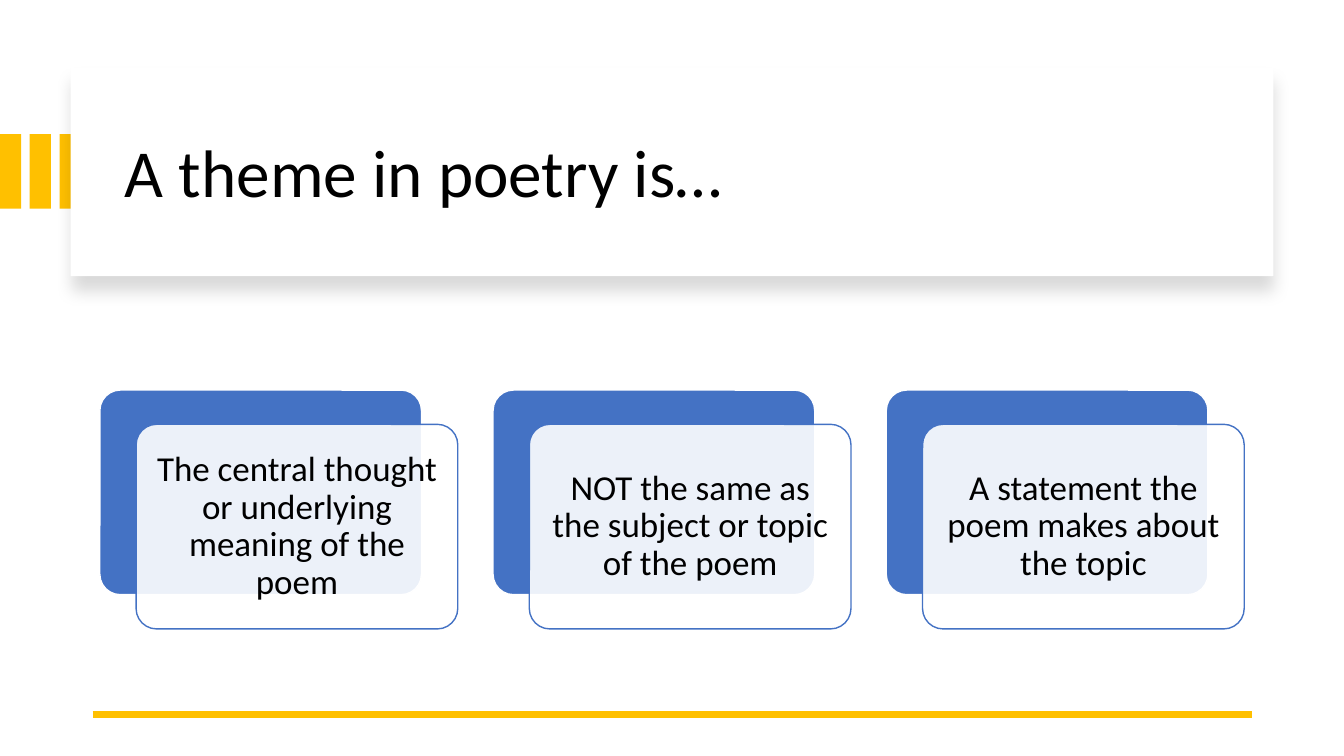
from lxml import etree
from pptx import Presentation
from pptx.dml.color import RGBColor
from pptx.enum.shapes import MSO_CONNECTOR, MSO_SHAPE
from pptx.enum.text import MSO_ANCHOR, PP_ALIGN
from pptx.oxml.ns import qn
from pptx.util import Inches, Pt

RECTANGLE, ROUNDED = MSO_SHAPE.RECTANGLE, MSO_SHAPE.ROUNDED_RECTANGLE
STRAIGHT = MSO_CONNECTOR.STRAIGHT
MIDDLE = MSO_ANCHOR.MIDDLE
LEFT, CENTER = PP_ALIGN.LEFT, PP_ALIGN.CENTER

GOLD, BLUE, WHITE, BLACK = "FFC000", "4472C4", "FFFFFF", "000000"
FONT = "Calibri"

# Grid in inches
STRIPE_PITCH, STRIPE_TOP, STRIPE_WIDTH, STRIPE_HEIGHT = 0.295, 1.33, 0.21, 0.74
CARD_LEFT, CARD_TOP, CARD_PITCH = 0.99, 3.87, 3.9
CARD_WIDTH, CARD_HEIGHT = 3.19, 2.03
CARD_SHIFT_X, CARD_SHIFT_Y = 0.36, 0.34

STATEMENTS = [
    "The central thought or underlying meaning of the poem",
    "NOT the same as the subject or topic of the poem",
    "A statement the poem makes about the topic",
]


def color(hex_value):
    return RGBColor.from_string(hex_value)


def add_box(slide, kind, left, top, width, height, fill, line=None):
    shape = slide.shapes.add_shape(
        kind, Inches(left), Inches(top), Inches(width), Inches(height))
    shape.shadow.inherit = False
    shape.fill.solid()
    shape.fill.fore_color.rgb = color(fill)
    if line:
        shape.line.color.rgb = color(line)
        shape.line.width = Pt(1)
    else:
        shape.line.fill.background()
    if kind == ROUNDED:
        shape.adjustments[0] = 0.1
    return shape


def set_opacity(shape, percent):
    fill_color = shape.element.spPr.find(qn("a:solidFill"))[0]
    etree.SubElement(fill_color, qn("a:alpha"), val=str(percent * 1000))


def add_drop_shadow(shape, blur, distance, percent):
    effects = shape.element.spPr.find(qn("a:effectLst"))
    shadow = etree.SubElement(
        effects, qn("a:outerShdw"), blurRad=str(Pt(blur)),
        dist=str(Pt(distance)), dir="5400000", algn="t", rotWithShape="0")
    shadow_color = etree.SubElement(shadow, qn("a:srgbClr"), val=BLACK)
    etree.SubElement(shadow_color, qn("a:alpha"), val=str(percent * 1000))


def write_text(shape, text, size, alignment, inset_x, inset_y):
    frame = shape.text_frame
    frame.text = text
    frame.word_wrap = True
    frame.vertical_anchor = MIDDLE
    frame.margin_left = frame.margin_right = Inches(inset_x)
    frame.margin_top = frame.margin_bottom = Inches(inset_y)
    paragraph = frame.paragraphs[0]
    paragraph.alignment = alignment
    paragraph.line_spacing = 0.9
    font = paragraph.runs[0].font
    font.name, font.size = FONT, Pt(size)
    font.color.rgb = color(BLACK)


def add_title(slide, text):
    # Stripes run in from the edge, behind the title panel
    for index in range(3):
        add_box(slide, RECTANGLE, index * STRIPE_PITCH, STRIPE_TOP,
                STRIPE_WIDTH, STRIPE_HEIGHT, GOLD)
    panel = add_box(slide, RECTANGLE, 0.7, 0.67, 11.93, 2.07, WHITE)
    add_drop_shadow(panel, 11, 10, 15)
    title = slide.shapes.add_textbox(
        Inches(1.14), Inches(0.89), Inches(11.13), Inches(1.7))
    write_text(title, text, 48, LEFT, 0.1, 0.05)


def add_rule(slide, left, right, top):
    rule = slide.shapes.add_connector(
        STRAIGHT, Inches(left), Inches(top), Inches(right), Inches(top))
    rule.line.color.rgb = color(GOLD)
    rule.line.width = Pt(4.5)
    etree.SubElement(rule.element.spPr, qn("a:effectLst"))


def add_card(slide, column, text):
    left = CARD_LEFT + column * CARD_PITCH
    add_box(slide, ROUNDED, left, CARD_TOP, CARD_WIDTH, CARD_HEIGHT, BLUE, WHITE)
    front = add_box(slide, ROUNDED, left + CARD_SHIFT_X, CARD_TOP + CARD_SHIFT_Y,
                    CARD_WIDTH, CARD_HEIGHT, WHITE, BLUE)
    set_opacity(front, 90)
    # The rounded corners add their own 0.06 inch to the inset
    write_text(front, text, 25, CENTER, 0.1, 0.1)


def main():
    presentation = Presentation()
    presentation.slide_width = Inches(13.33)
    presentation.slide_height = Inches(7.5)
    slide = presentation.slides.add_slide(presentation.slide_layouts[6])

    add_title(slide, "A theme in poetry is…")
    add_rule(slide, 0.92, 12.42, 7.09)
    for column, statement in enumerate(STATEMENTS):
        add_card(slide, column, statement)

    presentation.save("out.pptx")


if __name__ == "__main__":
    main()
